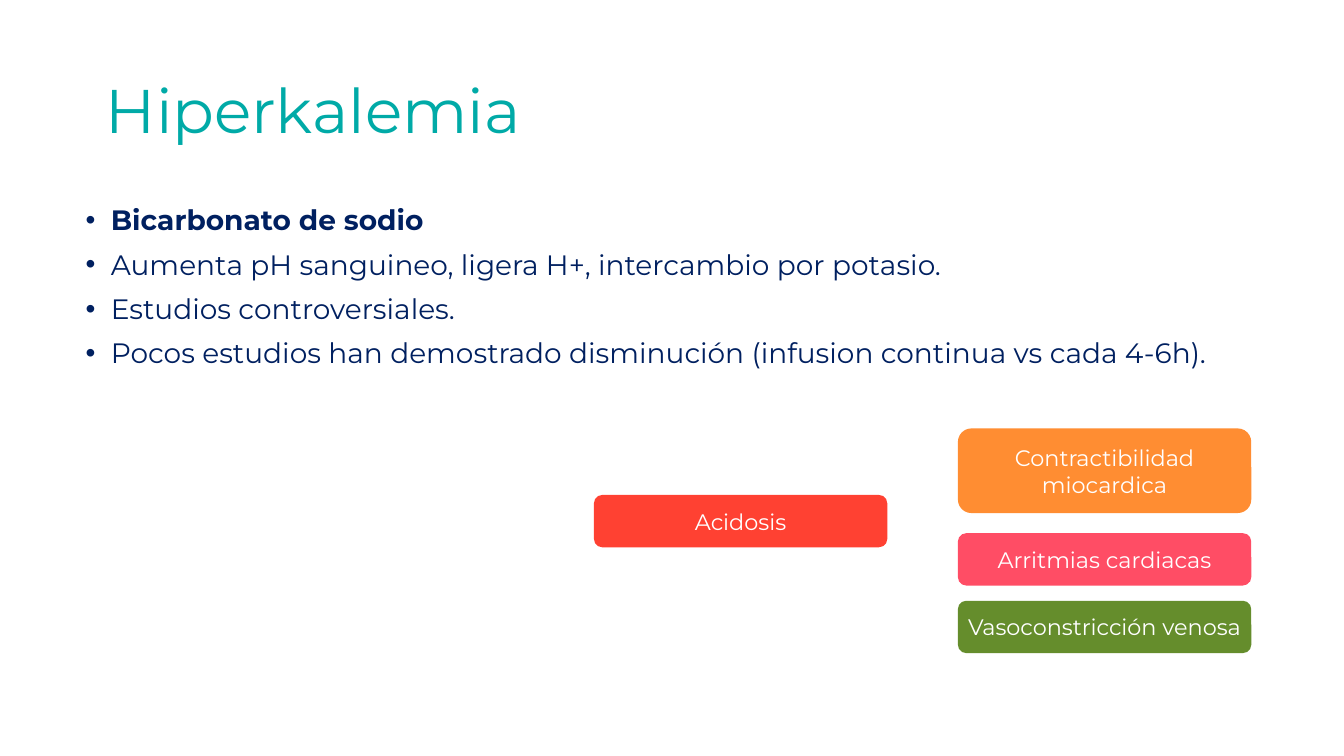
"""Build the hyperkalemia slide on sodium bicarbonate."""
import pptx
import pptx.dml.color
import pptx.enum.shapes
import pptx.enum.text
import pptx.oxml.ns
import pptx.util
import lxml.etree

Pt = pptx.util.Pt
Align = pptx.enum.text.PP_ALIGN
Anchor = pptx.enum.text.MSO_ANCHOR

deck = pptx.Presentation()
deck.slide_width = pptx.util.Inches(13.33)
deck.slide_height = pptx.util.Inches(7.5)
slide = deck.slides.add_slide(deck.slide_layouts[6])


def area(left, top, width, height):
    """Turn percentages of the slide into lengths."""
    sides = (deck.slide_width, deck.slide_height) * 2
    return [int(side * share / 100) for side, share in zip(sides, (left, top, width, height))]


def write(para, text, size, color, bold=False):
    """Add one run of text to a paragraph."""
    run = para.add_run()
    run.text = text
    run.font.name = "Montserrat"
    run.font.size = Pt(size)
    run.font.bold = bold
    run.font.color.rgb = pptx.dml.color.RGBColor.from_string(color)


title = slide.shapes.add_textbox(*area(6.9, 5.33, 32.86, 19.33)).text_frame
title.word_wrap = True
title.vertical_anchor = Anchor.MIDDLE
head = title.paragraphs[0]
head.alignment = Align.CENTER
head.line_spacing = 0.9
write(head, "Hiperkalemia", 44, "00AAA7")

points = [
    "Bicarbonato de sodio",
    "Aumenta pH sanguineo, ligera H+, intercambio por potasio.",
    "Estudios controversiales.",
    "Pocos estudios han demostrado disminución (infusion continua vs cada 4-6h).",
]
body = slide.shapes.add_textbox(*area(5.63, 26.67, 87.55, 36.8)).text_frame
body.word_wrap = True
indent = pptx.util.Inches(0.25)
for row, point in enumerate(points):
    para = body.add_paragraph() if row else body.paragraphs[0]
    props = para._p.get_or_add_pPr()
    props.set("marL", str(indent))
    props.set("indent", str(-indent))
    font = lxml.etree.SubElement(props, pptx.oxml.ns.qn("a:buFont"))
    font.set("typeface", "Arial")
    mark = lxml.etree.SubElement(props, pptx.oxml.ns.qn("a:buChar"))
    mark.set("char", "•")
    para.line_spacing = 0.9
    para.space_before = Pt(10 if row else 0)
    write(para, point, 20, "002060", bold=row == 0)

near, far = 44.19, 71.27
low, high = 6.93, 11.2
cards = [
    ("Acidosis", near, 65.47, low, "FF4132"),
    ("Contractibilidad miocardica", far, 56.67, high, "FF8D32"),
    ("Arritmias cardiacas", far, 70.53, low, "FF4D65"),
    ("Vasoconstricción venosa", far, 79.47, low, "658D2C"),
]
for label, left, top, height, color in cards:
    card = slide.shapes.add_shape(
        pptx.enum.shapes.MSO_SHAPE.ROUNDED_RECTANGLE, *area(left, top, 21.83, height))
    card.adjustments[0] = 0.16
    card.shadow.inherit = False
    card.fill.solid()
    card.fill.fore_color.rgb = pptx.dml.color.RGBColor.from_string(color)
    card.line.fill.background()
    frame = card.text_frame
    frame.word_wrap = True
    frame.vertical_anchor = Anchor.MIDDLE
    frame.margin_left = frame.margin_right = pptx.util.Inches(0.06)
    frame.margin_top = frame.margin_bottom = pptx.util.Inches(0.06)
    frame.paragraphs[0].alignment = Align.CENTER
    write(frame.paragraphs[0], label, 16, "FFFFFF")

deck.save("out.pptx")
